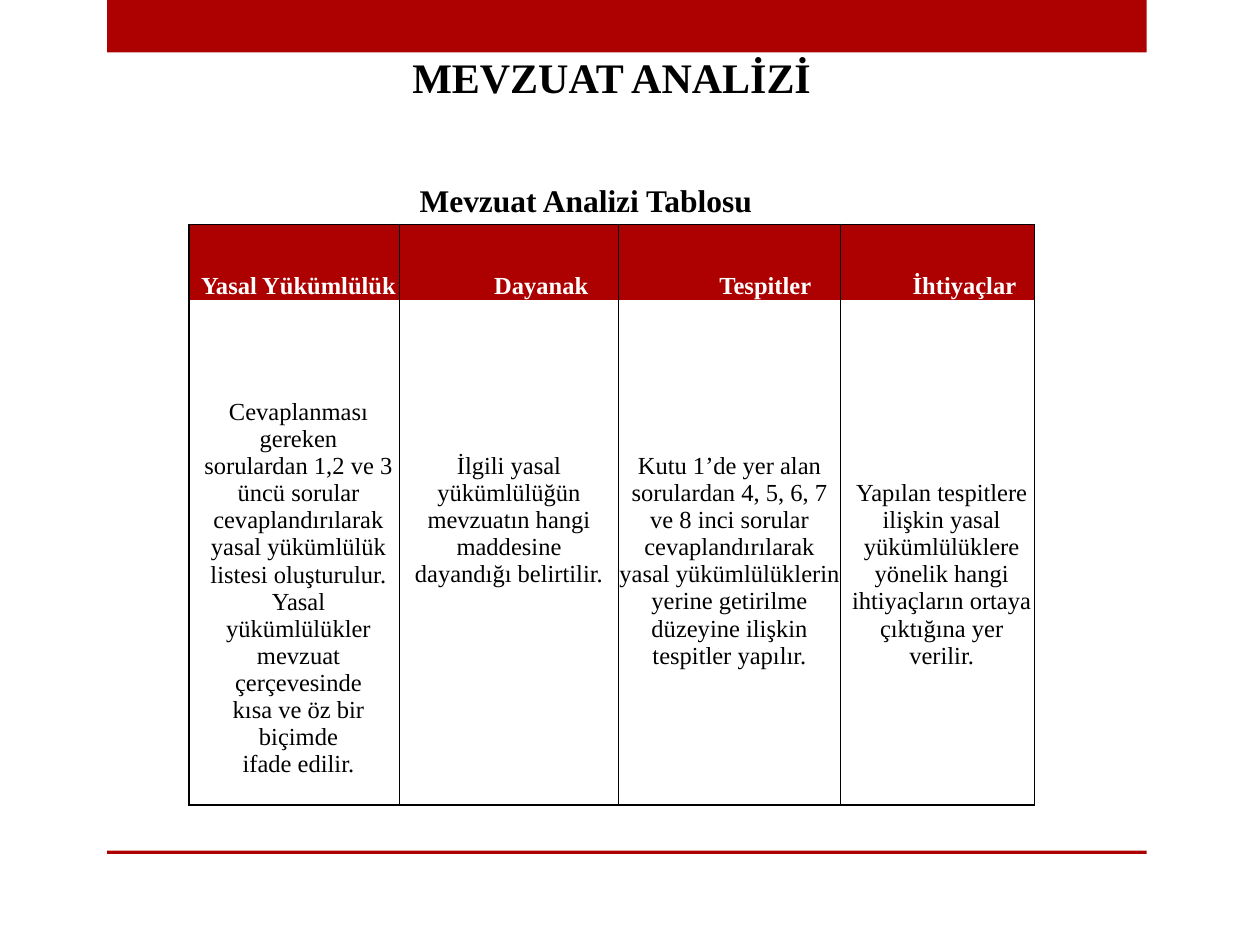
"""Build the legislation analysis slide with its four-column table."""
from typing import NamedTuple

from lxml.etree import SubElement
from pptx import Presentation
from pptx.dml.color import RGBColor
from pptx.enum.shapes import MSO_SHAPE as Shp
from pptx.enum.text import MSO_ANCHOR as Anchor, MSO_AUTO_SIZE as AutoSize, PP_ALIGN as Align
from pptx.oxml.ns import qn
from pptx.util import Pt

RED = RGBColor(0xAD, 0x01, 0x01)
BLACK = RGBColor(0, 0, 0)
WHITE = RGBColor(0xFF, 0xFF, 0xFF)
FONT = "Times New Roman"
CELL_SIZE = 14
LINE_HEIGHT = 15.5
HEADER_HEIGHT, BODY_HEIGHT = 43.2, 288.6


class Column(NamedTuple):
    width: float
    header: str
    header_indent: float
    body: list[str]
    body_indent: float
    lines_below: int


COLUMNS = [
    Column(120.2, "Yasal Yükümlülük", 5, [
        "Cevaplanması gereken",
        "sorulardan 1,2 ve 3 üncü sorular cevaplandırılarak",
        "yasal yükümlülük listesi oluşturulur.",
        "Yasal yükümlülükler",
        "mevzuat çerçevesinde",
        "kısa ve öz bir biçimde",
        "ifade edilir.",
    ], 5, 1),
    Column(125.4, "Dayanak", 36.7, [
        "İlgili yasal yükümlülüğün",
        "mevzuatın hangi maddesine",
        "dayandığı belirtilir.",
    ], 0, 8),
    Column(126.7, "Tespitler", 41, [
        "Kutu 1’de yer alan sorulardan 4, 5, 6, 7 ve 8 inci sorular "
        "cevaplandırılarak yasal yükümlülüklerin yerine getirilme "
        "düzeyine ilişkin tespitler yapılır.",
    ], 0, 5),
    Column(110.8, "İhtiyaçlar", 31, [
        "Yapılan tespitlere",
        "ilişkin yasal",
        "yükümlülüklere",
        "yönelik hangi",
        "ihtiyaçların ortaya",
        "çıktığına yer verilir.",
    ], 5, 5),
]


def format_text(tf, size: float, color: RGBColor, bold: bool, indent: float = 0) -> None:
    for p in tf.paragraphs:
        p.alignment = Align.CENTER
        if indent:
            pPr = p._p.get_or_add_pPr()
            pPr.set("marL", str(Pt(indent)))
            pPr.set("indent", "0")
        for r in p.runs:
            r.font.name, r.font.size, r.font.bold = FONT, Pt(size), bold
            r.font.color.rgb = color


def add_bar(s, top: float, height: float) -> None:
    sp = s.shapes.add_shape(Shp.RECTANGLE, Pt(61.2), Pt(top), Pt(594), Pt(height))
    sp.shadow.inherit = False
    sp.fill.solid()
    sp.fill.fore_color.rgb = RED
    sp.line.fill.background()


def fill_heading(sp, text: str, size: float) -> None:
    tf = sp.text_frame
    tf.text = text
    tf.word_wrap = True
    tf.auto_size = AutoSize.SHAPE_TO_FIT_TEXT
    tf.vertical_anchor = Anchor.TOP
    format_text(tf, size, BLACK, True)


def set_borders(cell, sides: str) -> None:
    tcPr = cell._tc.get_or_add_tcPr()
    for i, side in enumerate("LRTB"):
        ln = SubElement(tcPr, qn(f"a:ln{side}"), w=str(Pt(1)))
        if side in sides:
            fill = SubElement(ln, qn("a:solidFill"))
            SubElement(fill, qn("a:srgbClr"), val=str(BLACK))
        else:
            SubElement(ln, qn("a:noFill"))
        tcPr.insert(i, ln)


def fill_cell(cell, text: str, indent: float, fill: RGBColor, color: RGBColor,
              bold: bool, sides: str, bottom: float = 0) -> None:
    cell.margin_left = cell.margin_right = cell.margin_top = 0
    cell.margin_bottom = Pt(bottom)
    cell.vertical_anchor = Anchor.BOTTOM
    cell.fill.solid()
    cell.fill.fore_color.rgb = fill
    cell.text_frame.text = text
    format_text(cell.text_frame, CELL_SIZE, color, bold, indent)
    set_borders(cell, sides)


def add_analysis_table(s, left: float, top: float) -> None:
    width = sum(c.width for c in COLUMNS)
    frame = s.shapes.add_table(2, len(COLUMNS), Pt(left), Pt(top), Pt(width),
                               Pt(HEADER_HEIGHT + BODY_HEIGHT))
    tbl = frame.table
    tbl.first_row = tbl.horz_banding = False
    tbl.rows[0].height, tbl.rows[1].height = Pt(HEADER_HEIGHT), Pt(BODY_HEIGHT)
    for i, c in enumerate(COLUMNS):
        tbl.columns[i].width = Pt(c.width)
        fill_cell(tbl.cell(0, i), c.header, c.header_indent, RED, WHITE, True, "LRT")
        fill_cell(tbl.cell(1, i), "\n".join(c.body), c.body_indent, WHITE, BLACK,
                  False, "LRB", c.lines_below * LINE_HEIGHT)


def main() -> None:
    prs = Presentation()
    prs.slide_width, prs.slide_height = Pt(720), Pt(540)
    s = prs.slides.add_slide(prs.slide_layouts[5])
    add_bar(s, 0, 30)
    add_bar(s, 486, 2)

    title = s.shapes.title
    title.left, title.top, title.width, title.height = Pt(60.5), Pt(26), Pt(578), Pt(36)
    fill_heading(title, "MEVZUAT ANALİZİ", 24)

    add_analysis_table(s, 108, 128.2)
    caption = s.shapes.add_textbox(Pt(195.8), Pt(100), Pt(278), Pt(29))
    fill_heading(caption, "Mevzuat Analizi Tablosu", 18)
    prs.save("out.pptx")


if __name__ == "__main__":
    main()
